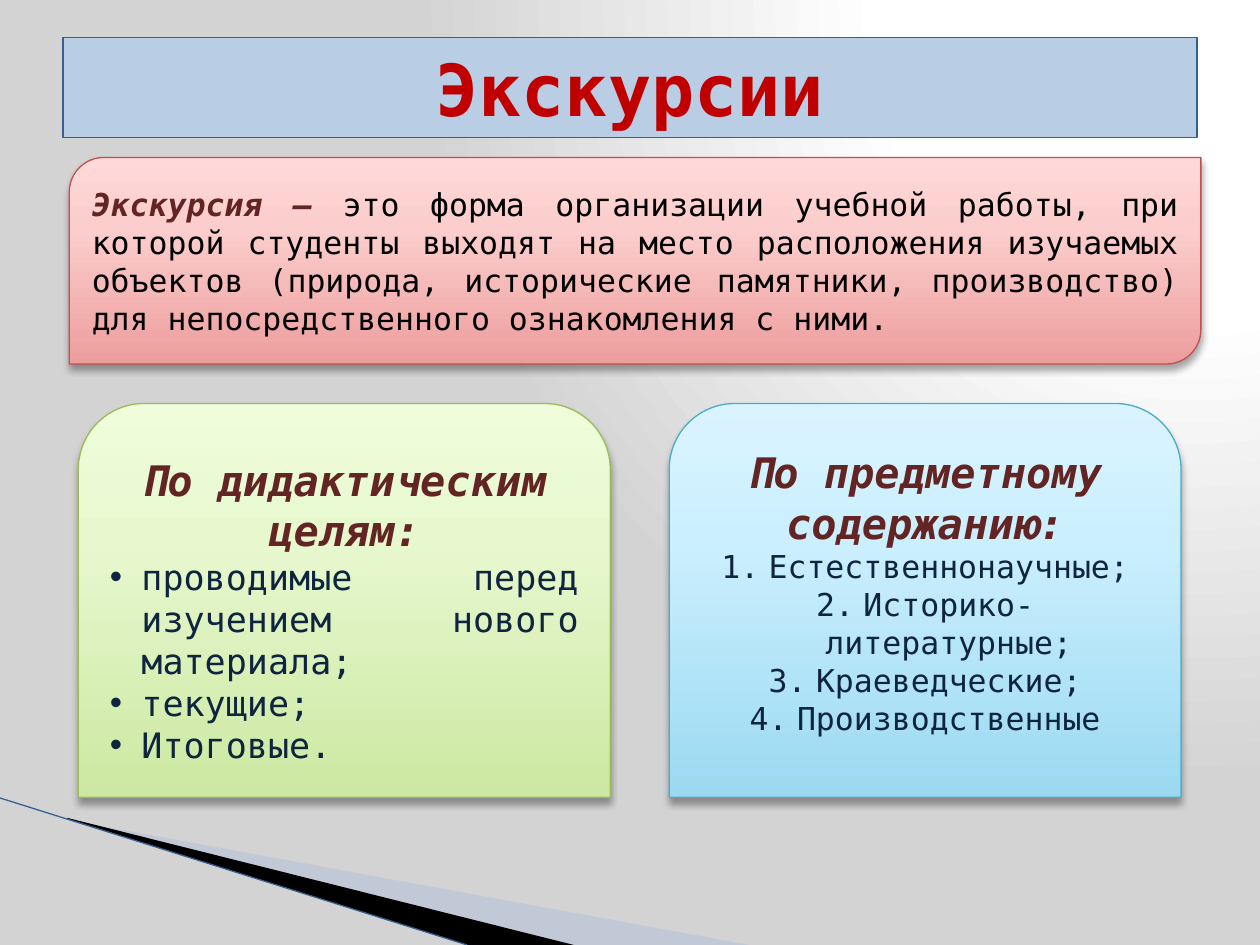
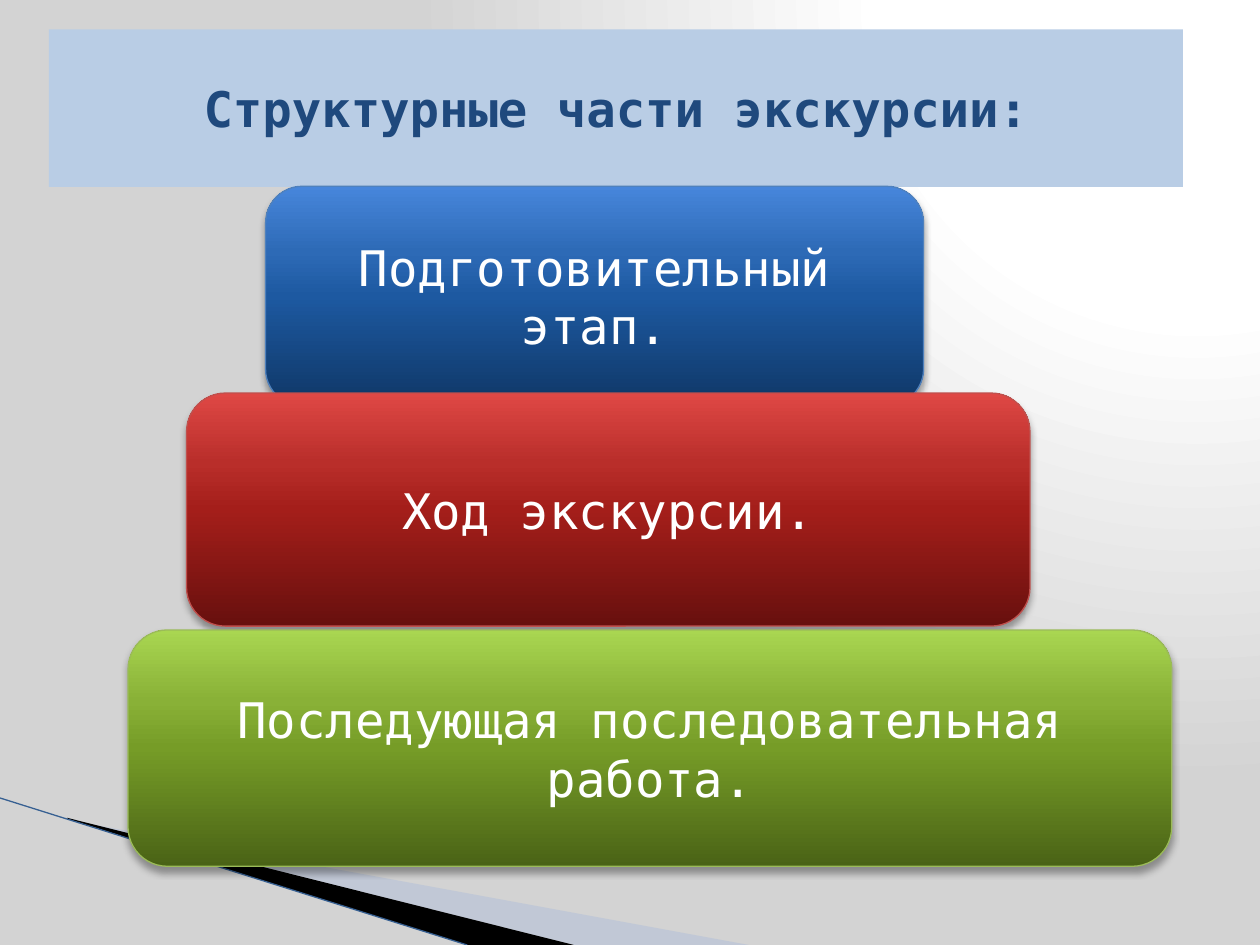
from dataclasses import dataclass
from typing import NamedTuple, Optional

from lxml.etree import SubElement, fromstring
from pptx import Presentation
from pptx.dml.color import RGBColor
from pptx.enum.shapes import MSO_CONNECTOR, MSO_SHAPE
from pptx.enum.text import MSO_ANCHOR, PP_ALIGN
from pptx.oxml.ns import nsdecls, qn
from pptx.util import Pt

# Shared look
FONT = "DejaVu Sans Mono"
BAND = "B9CDE5"
BROWN, NAVY = "632523", "0F243E"
LINE_WIDTH = 0.75
SOFT_STOPS = (0, 65, 100)
DEEP_STOPS = (0, 50, 70, 100)
UPWARD = '<a:lin ang="16200000" scaled="0"/>'
FROM_CORNER = ('<a:path path="circle">'
               '<a:fillToRect l="95000" t="-106000" r="5000" b="206000"/></a:path>')

LEAD = dict(size=Pt(18), bold=True, italic=True)
BODY = dict(size=Pt(18), bold=False, italic=False)
HEADING = dict(size=Pt(24), bold=True, italic=True)
AIM = dict(size=Pt(20), bold=False, italic=False)
STAGE = dict(size=Pt(28), bold=False)


class Box(NamedTuple):
    left: float
    top: float
    width: float
    height: float


class Run(NamedTuple):
    text: str
    color: str
    style: dict


class ListMark(NamedTuple):
    indent: float
    tag: str
    attributes: dict
    font: Optional[str] = None


BULLET = ListMark(18, "a:buChar", {"char": "•"}, "Arial")
NUMBER = ListMark(27, "a:buAutoNum", {"type": "arabicPeriod"})


@dataclass
class Para:
    runs: list[Run]
    align: PP_ALIGN = PP_ALIGN.CENTER
    mark: Optional[ListMark] = None


@dataclass
class Card:
    box: Box
    preset: MSO_SHAPE
    stops: tuple[int, ...]
    shades: tuple[str, ...]
    outline: str
    paras: list[Para]
    bottom_inset: float = 3.6


def rgb(color: str) -> RGBColor:
    return RGBColor.from_string(color)


def set_gradient(fill, owner, stops, shades, direction: str) -> None:
    """Give the owner of a fill a gradient with any number of stops."""
    fill.solid()
    steps = "".join(f'<a:gs pos="{stop * 1000}"><a:srgbClr val="{shade}"/></a:gs>'
                    for stop, shade in zip(stops, shades))
    gradient = fromstring(f'<a:gradFill {nsdecls("a")} rotWithShape="1">'
                          f'<a:gsLst>{steps}</a:gsLst>{direction}</a:gradFill>')
    owner.replace(owner.find(qn("a:solidFill")), gradient)


def set_outline(line, color: Optional[str]) -> None:
    if color is None:
        line.fill.background()
    else:
        line.color.rgb = rgb(color)
        line.width = Pt(LINE_WIDTH)


def add_drop_shadow(shape) -> None:
    effects = shape._element.spPr.find(qn("a:effectLst"))
    effects.append(fromstring(
        f'<a:outerShdw {nsdecls("a")} blurRad="{Pt(4)}" dist="{Pt(3)}" dir="5400000" '
        'rotWithShape="0"><a:srgbClr val="000000"><a:alpha val="35000"/></a:srgbClr>'
        '</a:outerShdw>'))


def add_mark(paragraph, mark: ListMark) -> None:
    properties = paragraph._p.get_or_add_pPr()
    properties.set("marL", str(Pt(mark.indent)))
    properties.set("indent", str(-Pt(mark.indent)))
    if mark.font:
        SubElement(properties, qn("a:buFont"), typeface=mark.font)
    SubElement(properties, qn(mark.tag), mark.attributes)


def write_text(frame, paras: list[Para]) -> None:
    frame.word_wrap = True
    frame.vertical_anchor = MSO_ANCHOR.MIDDLE
    for index, para in enumerate(paras):
        paragraph = frame.add_paragraph() if index else frame.paragraphs[0]
        paragraph.alignment = para.align
        if para.mark:
            add_mark(paragraph, para.mark)
        for part in para.runs:
            run = paragraph.add_run()
            run.text = part.text
            run.font.name = FONT
            run.font.color.rgb = rgb(part.color)
            for name, value in part.style.items():
                setattr(run.font, name, value)


def add_preset(slide, preset: MSO_SHAPE, box: Box, outline: Optional[str]):
    shape = slide.shapes.add_shape(preset, *map(Pt, box))
    shape.shadow.inherit = False
    set_outline(shape.line, outline)
    return shape


def add_title(slide, text: str, box: Box, color: str, size: float,
              outline: Optional[str] = None) -> None:
    band = add_preset(slide, MSO_SHAPE.RECTANGLE, box, outline)
    band.fill.solid()
    band.fill.fore_color.rgb = rgb(BAND)
    write_text(band.text_frame, [Para([Run(text, color, dict(size=Pt(size), bold=True))])])


def add_card(slide, card: Card) -> None:
    shape = add_preset(slide, card.preset, card.box, card.outline)
    set_gradient(shape.fill, shape._element.spPr, card.stops, card.shades, UPWARD)
    add_drop_shadow(shape)
    shape.text_frame.margin_bottom = Pt(card.bottom_inset)
    write_text(shape.text_frame, card.paras)


def add_wedge(slide, corners: list[tuple[float, float]], color: str,
              opacity: int = 100) -> None:
    points = [(Pt(x), Pt(y)) for x, y in corners]
    builder = slide.shapes.build_freeform(*points[0], scale=1.0)
    builder.add_line_segments(points[1:], close=True)
    wedge = builder.convert_to_shape()
    wedge.shadow.inherit = False
    wedge.line.fill.background()
    wedge.fill.solid()
    wedge.fill.fore_color.rgb = rgb(color)
    if opacity < 100:
        tint = wedge._element.spPr.find(qn("a:solidFill"))[0]
        SubElement(tint, qn("a:alpha"), val=str(opacity * 1000))


def add_slide(prs):
    """Start a slide with the wedges in its lower left corner."""
    slide = prs.slides.add_slide(prs.slide_layouts[6])
    add_wedge(slide, [(39.6, 468.7), (428, 540), (328, 540), (39.6, 468)], "A7B9DB", 40)
    add_wedge(slide, [(38.2, 467.3), (328, 540), (267, 540), (38.9, 468)], "000000")
    edge = slide.shapes.add_connector(MSO_CONNECTOR.STRAIGHT, Pt(0), Pt(456), Pt(267), Pt(540))
    set_outline(edge.line, "376092")
    SubElement(edge._element.spPr, qn("a:effectLst"))
    return slide


def items(texts: list[str], style: dict, align: PP_ALIGN, mark: ListMark) -> list[Para]:
    return [Para([Run(text, NAVY, style)], align, mark) for text in texts]


def heading(text: str) -> Para:
    return Para([Run(text, BROWN, HEADING)])


# Slide 1: definition and two classifications
DEFINITION = Card(
    Box(39.6, 90, 646.6, 118), MSO_SHAPE.ROUND_2_DIAG_RECTANGLE,
    SOFT_STOPS, ("EC9E9D", "FBCDCC", "FFD9D9"), "C0504D",
    [Para([Run("Экскурсия –", BROWN, LEAD),
           Run(" это форма организации учебной работы, при которой студенты выходят "
               "на место расположения изучаемых объектов (природа, исторические "
               "памятники, производство) для непосредственного ознакомления с ними.",
               "000000", BODY)], PP_ALIGN.JUSTIFY)])
BY_AIM = Card(
    Box(44.8, 230.6, 304, 225), MSO_SHAPE.ROUND_2_SAME_RECTANGLE,
    SOFT_STOPS, ("CCE8A2", "E7F8CF", "EFFDDB"), "9BBB59",
    [heading("По дидактическим целям:"),
     *items(["проводимые перед изучением нового материала;", "текущие;", "Итоговые."],
            AIM, PP_ALIGN.JUSTIFY, BULLET)])
BY_SUBJECT = Card(
    Box(382.4, 230.6, 292.5, 225), MSO_SHAPE.ROUND_2_SAME_RECTANGLE,
    SOFT_STOPS, ("9BD9F1", "CBEFFE", "DAF4FF"), "4BACC6",
    [heading("По предметному содержанию:"),
     *items(["Естественнонаучные;", "Историко-литературные;", "Краеведческие;",
             "Производственные"], BODY, PP_ALIGN.CENTER, NUMBER)],
    bottom_inset=24.6)

# Slide 2: stages, widening downwards
STAGES = [
    ("Подготовительный этап.", Box(151.8, 106.5, 376, 125.3),
     ("0F3766", "1D59A1", "2D6AB6", "4786DB"), "4F81BD"),
    ("Ход экскурсии.", Box(106.6, 224.6, 482, 133.2),
     ("68100E", "A41E1A", "B92E2A", "DF4845"), "C0504D"),
    ("Последующая последовательная работа.", Box(73.2, 360, 596.4, 135),
     ("4A6316", "769C27", "89B137", "A9D651"), "9BBB59"),
]


def main() -> None:
    prs = Presentation()
    prs.slide_width, prs.slide_height = Pt(720), Pt(540)
    master = prs.slide_master
    backdrop = master.background.fill
    set_gradient(backdrop, master._element.find(".//" + qn("p:bgPr")),
                 (0, 40, 100), ("FFFFFF", "FFFFFF", "D3D3D3"), FROM_CORNER)

    kinds = add_slide(prs)
    add_title(kinds, "Экскурсии", Box(36, 21.6, 648, 57), "C00000", 41, "376092")
    for card in (DEFINITION, BY_AIM, BY_SUBJECT):
        add_card(kinds, card)

    structure = add_slide(prs)
    add_title(structure, "Структурные части экскурсии:", Box(28, 16.8, 648, 90), "1F497D", 28)
    for text, box, shades, outline in STAGES:
        add_card(structure, Card(box, MSO_SHAPE.ROUNDED_RECTANGLE, DEEP_STOPS, shades,
                                 outline, [Para([Run(text, "FFFFFF", STAGE)])]))

    prs.save("out.pptx")


if __name__ == "__main__":
    main()
